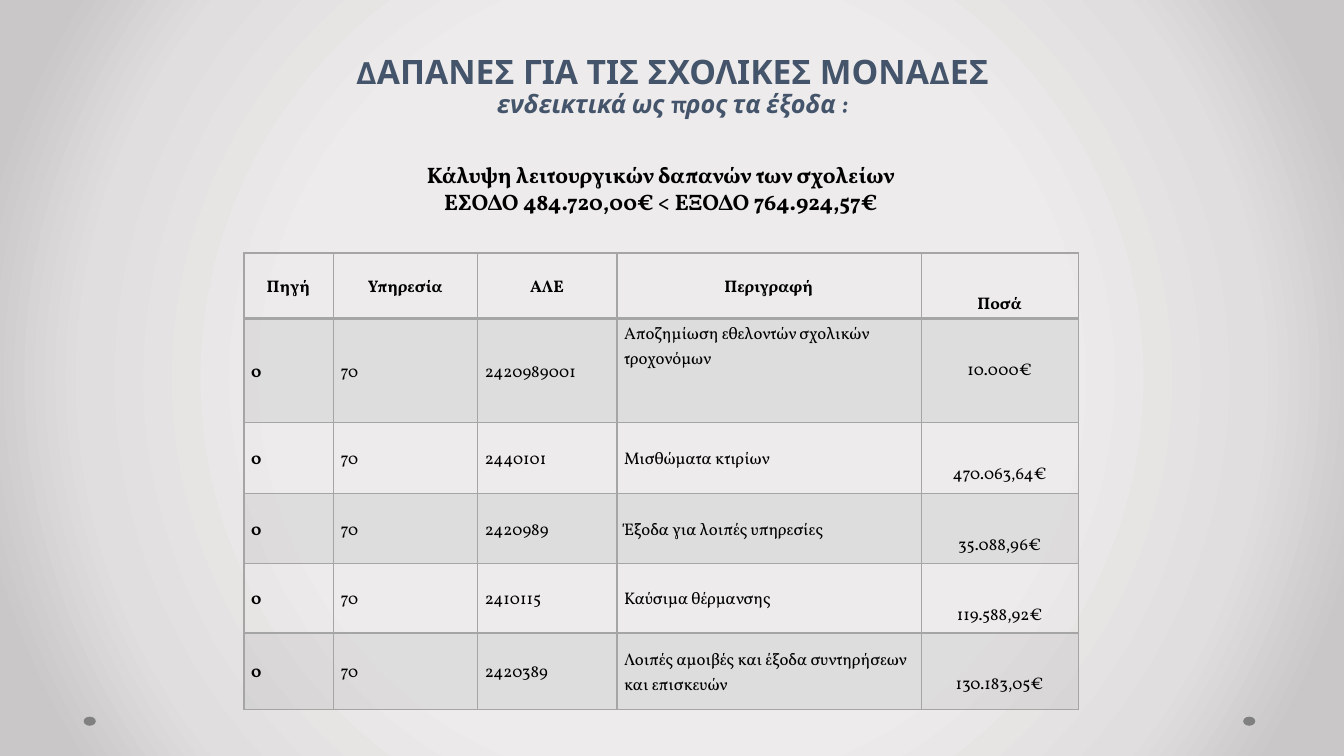
from pptx import Presentation
from pptx.dml.color import RGBColor
from pptx.enum.shapes import MSO_SHAPE as Preset
from pptx.enum.text import MSO_ANCHOR as Anchor, PP_ALIGN as Align
from pptx.oxml import parse_xml
from pptx.oxml.ns import nsdecls
from pptx.util import Inches, Pt

# Content
TITLE = "ΔΑΠΑΝΕΣ ΓΙΑ ΤΙΣ ΣΧΟΛΙΚΕΣ ΜΟΝΑΔΕΣ"
SUBTITLE = "ενδεικτικά ως προς τα έξοδα :"
SUMMARY = [
    "Κάλυψη λειτουργικών δαπανών των σχολείων",
    "ΕΣΟΔΟ 484.720,00€ < ΕΞΟΔΟ 764.924,57€",
]
EXPENSES = [
    ("Πηγή", "Υπηρεσία", "ΑΛΕ", "Περιγραφή", "Ποσά"),
    ("0", "70", "2420989001", "Αποζημίωση εθελοντών σχολικών τροχονόμων", "10.000€"),
    ("0", "70", "2440101", "Μισθώματα κτιρίων", "470.063,64€"),
    ("0", "70", "2420989", "Έξοδα για λοιπές υπηρεσίες", "35.088,96€"),
    ("0", "70", "2410115", "Καύσιμα θέρμανσης", "119.588,92€"),
    ("0", "70", "2420389", "Λοιπές αμοιβές και έξοδα συντηρήσεων και επισκευών", "130.183,05€"),
]
COLUMN_WIDTHS = [0.89, 1.43, 1.38, 3.02, 1.56]
ROW_HEIGHTS = [0.65, 1.03, 0.71, 0.69, 0.69, 0.76]
AMOUNT_COLUMN = len(COLUMN_WIDTHS) - 1
DESCRIPTION_COLUMN = AMOUNT_COLUMN - 1
COLORS = {
    "title": "44546A", "text": "000000", "grid": "A5A5A5", "dot": "808080",
    "center": "EDEBEB", "middle": "E0DEDE", "edge": "C9C7C7",
}
BACKGROUND_STOPS = [(50, "center"), (76, "middle"), (92, "edge")]


def color(name):
    return RGBColor.from_string(COLORS[name])


def style(font, name, size, color_name, bold):
    font.name, font.bold = name, bold
    font.color.rgb = color(color_name)
    if size:
        font.size = Pt(size)


def add_text_frame(slide, left, top, width, height, anchor):
    frame = slide.shapes.add_textbox(*map(Inches, (left, top, width, height))).text_frame
    frame.word_wrap = True
    frame.vertical_anchor = anchor
    return frame


def paint_background(slide):
    stops = "".join(
        f'<a:gs pos="{position * 1000}"><a:srgbClr val="{COLORS[name]}"/></a:gs>'
        for position, name in BACKGROUND_STOPS)
    background = parse_xml(
        f'<p:bg {nsdecls("p", "a")}><p:bgPr><a:gradFill rotWithShape="1">'
        f'<a:gsLst>{stops}</a:gsLst><a:path path="circle">'
        '<a:fillToRect l="50000" t="50000" r="50000" b="50000"/></a:path>'
        '</a:gradFill><a:effectLst/></p:bgPr></p:bg>')
    slide.element.cSld.insert(0, background)


def draw_borders(cell, row):
    widths = {"lnL": 1, "lnR": 1, "lnT": 2 if row == 1 else 1, "lnB": 2 if row == 0 else 1}
    for side, width in widths.items():
        cell._tc.get_or_add_tcPr().append(parse_xml(
            f'<a:{side} {nsdecls("a")} w="{Pt(width)}"><a:solidFill>'
            f'<a:srgbClr val="{COLORS["grid"]}"/></a:solidFill></a:{side}>'))


def fill_band(cell, row):
    if row % 2 == 0:
        cell.fill.background()
        return
    cell.fill.solid()
    cell.fill.fore_color.rgb = color("grid")
    cell._tc.tcPr.find(".//{*}solidFill/{*}srgbClr[@val='%s']/../../{*}solidFill[last()]/{*}srgbClr"
                       % COLORS["grid"])
    tint = cell._tc.tcPr[-1][0]
    tint.append(parse_xml(f'<a:alpha {nsdecls("a")} val="20000"/>'))


def format_cell(cell, row, column, text):
    draw_borders(cell, row)
    fill_band(cell, row)
    is_amount = column == AMOUNT_COLUMN
    at_top = is_amount or (row == 1 and column == DESCRIPTION_COLUMN)
    cell.vertical_anchor = Anchor.TOP if at_top else Anchor.MIDDLE
    cell.margin_left, cell.margin_right = Inches(0.07), Inches(0.08)
    cell.margin_top, cell.margin_bottom = Inches(0.39 if is_amount else 0.03), 0
    cell.text = text
    paragraph = cell.text_frame.paragraphs[0]
    paragraph.alignment = Align.CENTER if row == 0 or is_amount else Align.LEFT
    paragraph.line_spacing = 1.07
    style(paragraph.font, "Vollkorn", 12, "text", row == 0 or column == 0)


presentation = Presentation()
presentation.slide_width, presentation.slide_height = Inches(13.33), Inches(7.5)
slide = presentation.slides.add_slide(presentation.slide_layouts[6])
paint_background(slide)

# Corner dots
for left in (12.33, 0.83):
    dot = slide.shapes.add_shape(Preset.OVAL, *map(Inches, (left, 7.11, 0.12, 0.09)))
    dot.shadow.inherit = False
    dot.fill.solid()
    dot.fill.fore_color.rgb = color("dot")
    dot.line.fill.background()

# Title and subtitle
heading = add_text_frame(slide, 0.67, 0.25, 12, 0.98, Anchor.BOTTOM).paragraphs[0]
heading.alignment = Align.CENTER
heading.line_spacing = Pt(20)
style(heading.font, "Karla", None, "title", True)
title = heading.add_run()
title.text, title.font.size = TITLE, Pt(24)
heading.add_line_break()
subtitle = heading.add_run()
subtitle.text, subtitle.font.size, subtitle.font.italic = SUBTITLE, Pt(18), True

# Income and expense summary
summary = add_text_frame(slide, 3.61, 1.55, 5.89, 0.64, Anchor.MIDDLE)
summary.margin_top = summary.margin_bottom = 0
summary.text = "\n".join(SUMMARY)
for paragraph in summary.paragraphs:
    paragraph.alignment = Align.CENTER
    style(paragraph.font, "Vollkorn", 16, "text", True)

# Expense table
table = slide.shapes.add_table(
    len(ROW_HEIGHTS), len(COLUMN_WIDTHS), Inches(2.42), Inches(2.51),
    Inches(sum(COLUMN_WIDTHS)), Inches(sum(ROW_HEIGHTS))).table
table.first_row = table.horz_banding = False
for column, width in zip(table.columns, COLUMN_WIDTHS):
    column.width = Inches(width)
for row, height in zip(table.rows, ROW_HEIGHTS):
    row.height = Inches(height)
for row, values in enumerate(EXPENSES):
    for column, text in enumerate(values):
        format_cell(table.cell(row, column), row, column, text)

presentation.save("out.pptx")
